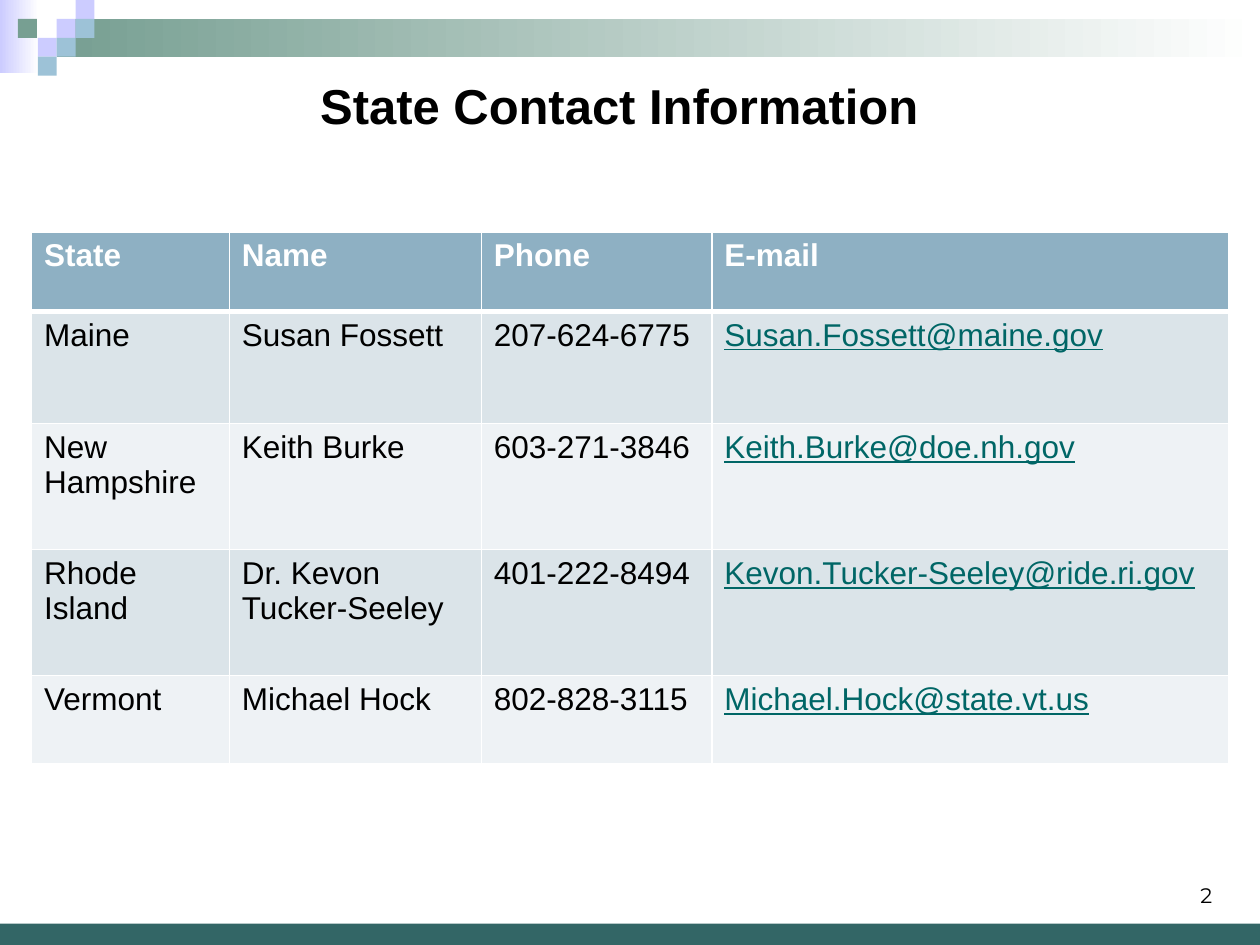
"""Build the State Contact Information slide."""
from typing import NamedTuple

from lxml import etree
from pptx import Presentation
from pptx import util as u
from pptx.dml import color as c
from pptx.enum import shapes, text
from pptx.oxml import ns


class Box(NamedTuple):
    left: float
    top: float
    width: float
    height: float
    fill: str
    fade_to: str = ""


class Label(NamedTuple):
    left: float
    top: float
    width: float
    height: float
    words: str
    size: int
    font: str
    bold: bool
    align: text.PP_ALIGN
    anchor: text.MSO_ANCHOR


LILAC, SKY, SAGE, WHITE, BLACK = "CCCCFF", "9DC2D7", "779F92", "FFFFFF", "000000"
HEADER, BANDS, LINK = "8EB0C3", ("DBE4E9", "EEF2F5"), "006666"
TILE = 0.15

BOXES = [
    Box(0, 0, 0.31, 0.58, LILAC, WHITE),
    Box(0.45, 0.15, 9.55, 0.3, SAGE, WHITE),
    *(Box(col * TILE, row * TILE, TILE, TILE, fill) for col, row, fill in [
        (3, 1, LILAC), (4, 0, LILAC), (4, 1, SKY), (2, 2, LILAC),
        (0.95, 1, SAGE), (3, 2, SKY), (2, 3, SKY)]),
    Box(0, 7.33, 10, 0.17, "336666"),
]
LABELS = [
    Label(7.39, 6.73, 2.33, 0.52, "2", 12, "Montserrat", False,
          text.PP_ALIGN.RIGHT, text.MSO_ANCHOR.BOTTOM),
    Label(2, 0.55, 5.83, 0.57, "State Contact Information", 28, "Arial", True,
          text.PP_ALIGN.CENTER, text.MSO_ANCHOR.TOP),
]
COLUMNS = (1.57, 2, 1.83, 4.1)
HEIGHTS = (0.63, 0.89, 1, 1, 0.7)
CONTACTS = [
    ("State", "Name", "Phone", "E-mail"),
    ("Maine", "Susan Fossett", "207-624-6775", "Susan.Fossett@maine.gov"),
    ("New Hampshire", "Keith Burke", "603-271-3846", "Keith.Burke@doe.nh.gov"),
    ("Rhode Island", "Dr. Kevon Tucker-Seeley", "401-222-8494",
     "Kevon.Tucker-Seeley@ride.ri.gov"),
    ("Vermont", "Michael Hock", "802-828-3115", "Michael.Hock@state.vt.us"),
]


def rgb(value: str) -> c.RGBColor:
    return c.RGBColor.from_string(value)


def style(p, size: int, font: str, color: str, bold: bool = False) -> None:
    for r in p.runs:
        r.font.size = u.Pt(size)
        r.font.name = font
        r.font.bold = bold
        r.font.color.rgb = rgb(color)


def draw_box(s, box: Box) -> None:
    sp = s.shapes.add_shape(shapes.MSO_SHAPE.RECTANGLE, *map(u.Inches, box[:4]))
    sp.shadow.inherit = False
    sp.line.fill.background()
    if box.fade_to:
        sp.fill.gradient()
        sp.fill.gradient_angle = 0
        for stop, value in zip(sp.fill.gradient_stops, (box.fill, box.fade_to)):
            stop.color.rgb = rgb(value)
    else:
        sp.fill.solid()
        sp.fill.fore_color.rgb = rgb(box.fill)


def draw_label(s, label: Label) -> None:
    tf = s.shapes.add_textbox(*map(u.Inches, label[:4])).text_frame
    tf.word_wrap = True
    tf.vertical_anchor = label.anchor
    tf.text = label.words
    p = tf.paragraphs[0]
    p.alignment = label.align
    style(p, label.size, label.font, BLACK, label.bold)


def add_border(cell, side: str, points: float) -> None:
    ln = etree.SubElement(cell._tc.get_or_add_tcPr(), ns.qn(f"a:ln{side}"),
                          w=str(u.Pt(points)))
    fill = etree.SubElement(ln, ns.qn("a:solidFill"))
    etree.SubElement(fill, ns.qn("a:srgbClr"), val=WHITE)


def draw_cell(cell, words: str, row: int) -> None:
    for side in "LRTB":
        thick = (row, side) in ((0, "B"), (1, "T"))
        add_border(cell, side, 3 if thick else 1)
    cell.fill.solid()
    cell.fill.fore_color.rgb = rgb(BANDS[(row - 1) % 2] if row else HEADER)
    cell.text_frame.text = words
    p = cell.text_frame.paragraphs[0]
    is_link = "@" in words
    style(p, 18, "Arial", LINK if is_link else BLACK if row else WHITE, row == 0)
    p.runs[0].font.underline = is_link


def draw_contacts(s) -> None:
    table = s.shapes.add_table(
        len(CONTACTS), len(COLUMNS), u.Inches(0.25), u.Inches(1.84),
        u.Inches(sum(COLUMNS)), u.Inches(sum(HEIGHTS))).table
    for column, width in zip(table.columns, COLUMNS):
        column.width = u.Inches(width)
    for i, (height, contact) in enumerate(zip(HEIGHTS, CONTACTS)):
        table.rows[i].height = u.Inches(height)
        for j, words in enumerate(contact):
            draw_cell(table.cell(i, j), words, i)


def main() -> None:
    prs = Presentation()
    prs.slide_width, prs.slide_height = u.Inches(10), u.Inches(7.5)
    s = prs.slides.add_slide(prs.slide_layouts[6])
    for box in BOXES:
        draw_box(s, box)
    for label in LABELS:
        draw_label(s, label)
    draw_contacts(s)
    prs.save("out.pptx")


if __name__ == "__main__":
    main()
